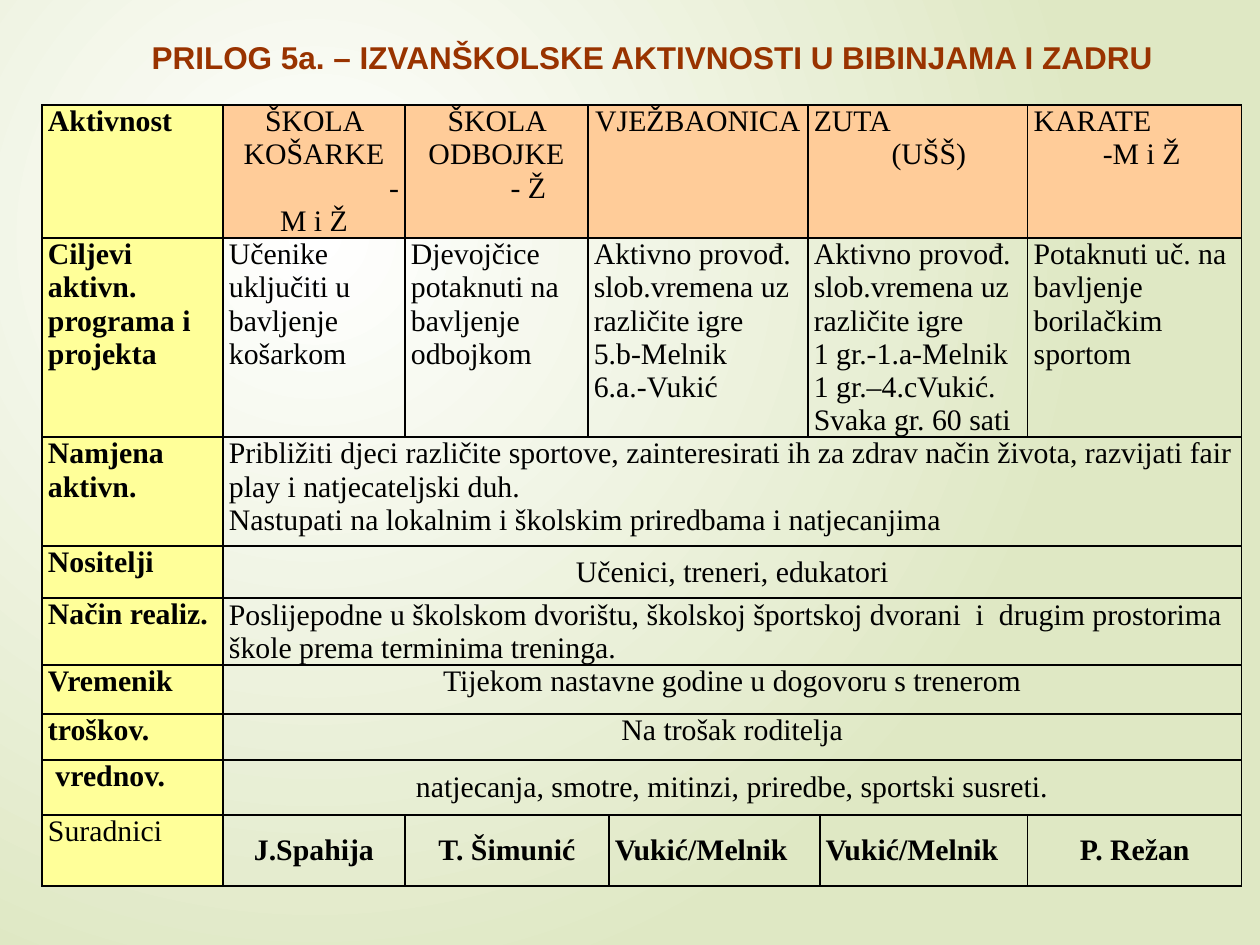
from lxml import etree
from pptx import Presentation, util as u
from pptx.dml.color import RGBColor
from pptx.enum import text
from pptx.oxml.ns import qn

PX = 914400 // 126
LEFT, MID = text.PP_ALIGN.LEFT, text.PP_ALIGN.CENTER
RIGHT = text.PP_ALIGN.RIGHT
YELLOW, PEACH, BLACK = "FFFF99", "FFCC99", "000000"


def write(frame, lines, size=17, font="Times New Roman", color=BLACK,
          bold=False, align=LEFT):
    """Fill a frame; a line is a string or (string, align, indent in px)."""
    for i, line in enumerate(lines):
        words, side, dent = (line, align, 0) if isinstance(line, str) else line
        par = frame.paragraphs[0] if i == 0 else frame.add_paragraph()
        par.alignment = side
        if dent:
            par._p.get_or_add_pPr().set("marL", str(dent * PX))
        run = par.add_run()
        run.text = words
        run.font.size, run.font.name, run.font.bold = u.Pt(size), font, bold
        run.font.color.rgb = RGBColor.from_string(color)


def edge(cell):
    """Draw thin black lines on all four sides of a cell."""
    props = cell._tc.get_or_add_tcPr()
    for i, side in enumerate("LRTB"):
        line = etree.Element(qn("a:ln" + side), w=str(u.Pt(1)))
        fill = etree.SubElement(line, qn("a:solidFill"))
        etree.SubElement(fill, qn("a:srgbClr"), val=BLACK)
        props.insert(i, line)


prs = Presentation()
prs.slide_width, prs.slide_height = u.Inches(10), u.Inches(7.5)
slide = prs.slides.add_slide(prs.slide_layouts[5])

# Background: white glow fading to green
back = slide.background.fill
back.gradient()
for stop, color in zip(back.gradient_stops, ["FFFFFF", "DFE8C4"]):
    stop.color.rgb = RGBColor.from_string(color)
back.gradient_stops[0].position, back.gradient_stops[1].position = 0, 1
grad = slide.element.find(".//" + qn("a:gradFill"))
grad.remove(grad.find(qn("a:lin")))
glow = etree.SubElement(grad, qn("a:path"))
glow.set("path", "circle")
etree.SubElement(glow, qn("a:fillToRect"),
                 l="50000", t="50000", r="100000", b="100000")

# Title
title = slide.shapes.title
title.left, title.top, title.width, title.height = (
    n * PX for n in (139, 32, 1039, 50))
title.text_frame.word_wrap = False
title.text_frame.auto_size = text.MSO_AUTO_SIZE.NONE
title.text_frame.vertical_anchor = text.MSO_ANCHOR.MIDDLE
write(title.text_frame,
      ["PRILOG 5a. – IZVANŠKOLSKE AKTIVNOSTI U BIBINJAMA I ZADRU"],
      size=18, font="Arial", color="993300", bold=True)

# Table grid
wides = [181, 182, 183, 21, 199, 12, 208, 214]
highs = [133, 199, 109, 52, 67, 49, 46, 55, 71]
grid = slide.shapes.add_table(len(highs), len(wides), 42 * PX, 105 * PX,
                              sum(wides) * PX, sum(highs) * PX).table
grid.first_row = grid.horz_banding = False
for col, wide in zip(grid.columns, wides):
    col.width = wide * PX
for row, high in zip(grid.rows, highs):
    row.height = high * PX

# Each row: label, cells as (first column, last column, lines), format
split = [(1, 1), (2, 2), (3, 4), (5, 6), (7, 7)]
staff = [(1, 1), (2, 3), (4, 5), (6, 6), (7, 7)]
whole = [(1, 7)]
rows = [
    ("Aktivnost", split, [
        ["ŠKOLA KOŠARKE", ("-", RIGHT, 0), "M i Ž"],
        ["ŠKOLA ODBOJKE", ("- Ž", MID, 64)],
        ["VJEŽBAONICA"],
        [("ZUTA", LEFT, 0), ("(UŠŠ)", MID, 22)],
        [("KARATE", LEFT, 0), ("-M i Ž", MID, 14)],
    ], MID, False),
    ("Ciljevi aktivn. programa i projekta", split, [
        ["Učenike uključiti u bavljenje košarkom"],
        ["Djevojčice potaknuti na bavljenje odbojkom"],
        ["Aktivno provođ. slob.vremena uz različite igre",
         "5.b-Melnik", "6.a.-Vukić"],
        ["Aktivno provođ. slob.vremena uz različite igre",
         "1 gr.-1.a-Melnik", "1 gr.–4.cVukić. Svaka gr. 60 sati"],
        ["Potaknuti uč. na bavljenje borilačkim sportom"],
    ], LEFT, False),
    ("Namjena aktivn.", whole, [
        ["Približiti djeci različite sportove, zainteresirati ih za zdrav "
         "način života, razvijati fair play i natjecateljski duh.",
         "Nastupati na lokalnim i školskim priredbama i natjecanjima"],
    ], LEFT, False),
    ("Nositelji", whole, [["Učenici, treneri, edukatori"]], MID, True),
    ("Način realiz.", whole, [
        ["Poslijepodne u školskom dvorištu, školskoj športskoj dvorani  i  "
         "drugim prostorima škole prema terminima treninga."],
    ], LEFT, True),
    ("Vremenik", whole,
     [["Tijekom nastavne godine u dogovoru s trenerom"]], MID, False),
    ("troškov.", whole, [["Na trošak roditelja"]], MID, False),
    (" vrednov.", whole,
     [["natjecanja, smotre, mitinzi, priredbe, sportski susreti."]],
     MID, True),
    ("Suradnici", staff, [
        ["J.Spahija"], ["T. Šimunić"], [("Vukić/Melnik", LEFT, 0)],
        [("Vukić/Melnik", LEFT, 0)], ["P. Režan"],
    ], MID, True),
]

for r, (label, spans, cells, align, middle) in enumerate(rows):
    last = r == len(rows) - 1
    for first, end in spans:
        if end > first:
            grid.cell(r, first).merge(grid.cell(r, end))
    for c in range(len(wides)):
        cell = grid.cell(r, c)
        cell.margin_left = cell.margin_right = 6 * PX
        cell.margin_top = cell.margin_bottom = 0
        if c == 0 or r == 0:
            cell.fill.solid()
            cell.fill.fore_color.rgb = RGBColor.from_string(
                PEACH if c else YELLOW)
        else:
            cell.fill.background()
        edge(cell)
    write(grid.cell(r, 0).text_frame, [label], bold=not last)
    for (first, end), lines in zip(spans, cells):
        cell = grid.cell(r, first)
        if middle:
            cell.vertical_anchor = text.MSO_ANCHOR.MIDDLE
        write(cell.text_frame, lines, align=align, bold=last)

prs.save("out.pptx")
